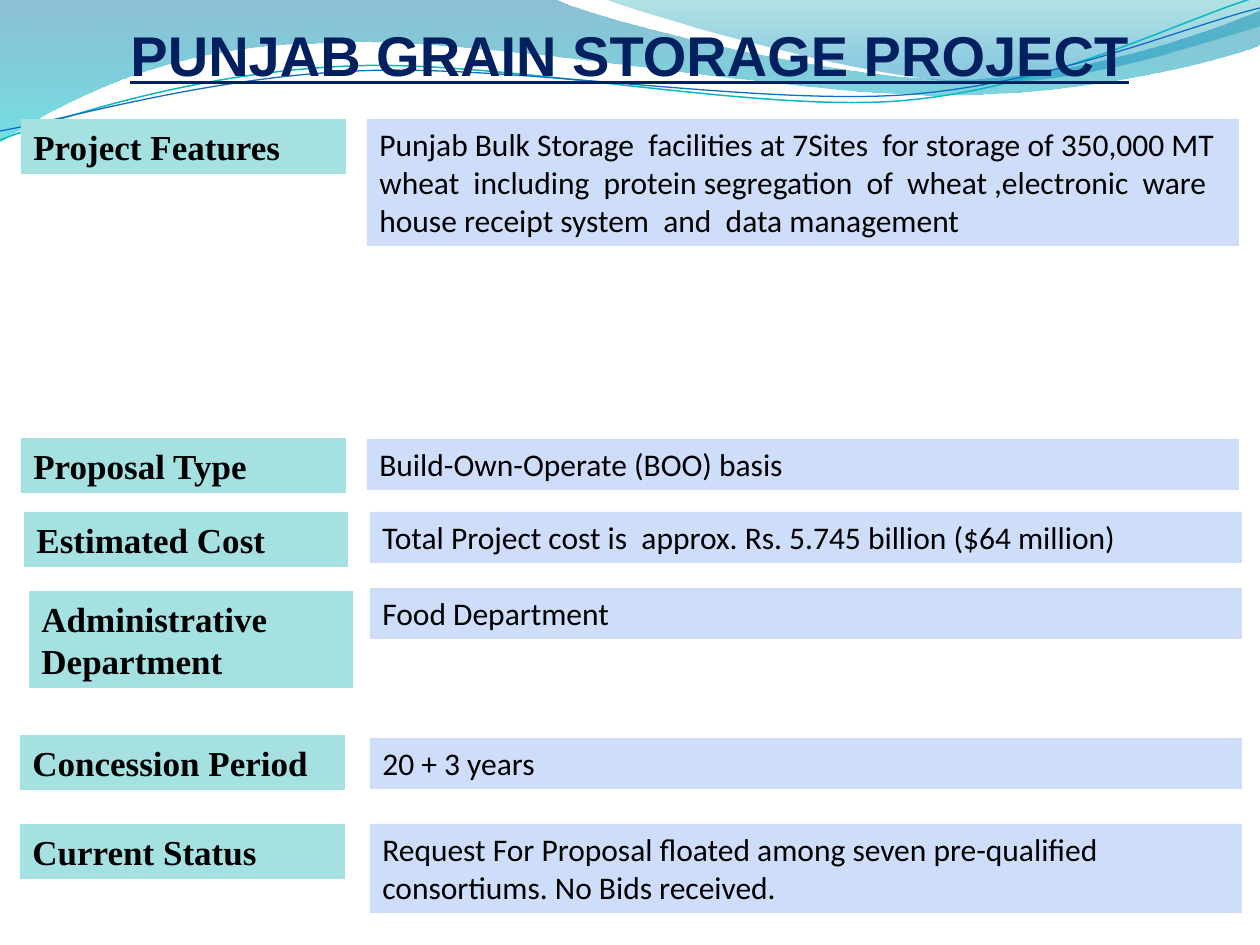
from lxml import etree
from pptx import Presentation
from pptx.dml.color import RGBColor
from pptx.enum.shapes import MSO_SHAPE
from pptx.enum.text import MSO_ANCHOR, MSO_AUTO_SIZE, PP_ALIGN
from pptx.oxml.ns import qn
from pptx.util import Emu, Pt

EMU_PER_PX = 914400 / 126
RECTANGLE = MSO_SHAPE.RECTANGLE
TOP, BOTTOM = MSO_ANCHOR.TOP, MSO_ANCHOR.BOTTOM
GROW = MSO_AUTO_SIZE.SHAPE_TO_FIT_TEXT
LEFT, CENTER = PP_ALIGN.LEFT, PP_ALIGN.CENTER

COLORS = {
    "title": "002060", "text": "000000", "label": "A6E1E2", "detail": "CEDDFA",
    "deep_blue": "0074A1", "aqua": "00C6CF", "teal": "00A1A9", "sky": "008BBF",
    "teal_line": "0AB8BF", "blue_line": "0F6FC6",
}

WAVE_BANDS = [
    ((0, -1), [
        [(554, -1)],
        [(600, 21), (837, 79), (955, 79)],
        [(1075, 79), (1207, 33), (1260, 11)],
        [(1261, 45)],
        [(1239, 55), (1096, 96), (940, 95)],
        [(784, 95), (481, 35), (324, 43)],
        [(163, 44), (58, 105), (-1, 142)],
        [(0, -1)],
    ], [("deep_blue", 0, 45), ("aqua", 1, 55)]),
    ((604, -1), [
        [(641, 14), (859, 78), (969, 82)],
        [(1079, 87), (1211, 40), (1260, 26)],
        [(1260, 0)],
        [(604, -1)],
    ], [("teal", 0, 30), ("sky", 0.8, 45)]),
]
WAVE_LINES = [
    ((0, 140), [
        [(60, 117), (199, 72), (349, 66)],
        [(498, 59), (747, 112), (898, 101)],
        [(1050, 89), (1182, 19), (1257, -3)],
    ], "teal_line", 0.85),
    ((0, 131), [
        [(59, 121), (207, 77), (357, 71)],
        [(508, 64), (752, 105), (903, 95)],
        [(1053, 84), (1186, 26), (1260, 8)],
    ], "blue_line", 0.75),
]

LABELS = [
    ("Project Features", 21, 119, 325, 55),
    ("Proposal Type", 21, 438, 325, 55),
    ("Estimated Cost", 24, 512, 324, 55),
    ("Administrative Department", 29, 591, 324, 97),
    ("Concession Period", 20, 735, 325, 55),
    ("Current Status", 20, 824, 325, 55),
]
DETAILS = [
    ("Punjab Bulk Storage  facilities at 7Sites  for storage of 350,000 MT wheat  "
     "including  protein segregation  of  wheat ,electronic  ware house receipt "
     "system  and  data management", 367, 119, 872, 127),
    ("Build-Own-Operate (BOO) basis", 367, 439, 872, 51),
    ("Total Project cost is  approx. Rs. 5.745 billion ($64 million)", 370, 512, 872, 51),
    ("Food Department", 370, 588, 872, 51),
    ("20 + 3 years", 370, 738, 872, 51),
    ("Request For Proposal floated among seven pre-qualified consortiums. "
     "No Bids received.", 370, 824, 872, 89),
]


def px(length):
    """Turn a length in px into EMU."""
    return Emu(round(length * EMU_PER_PX))


def rgb(name):
    """Look up a named colour."""
    return RGBColor.from_string(COLORS[name])


def bend(wave, segments):
    """Turn the edges that have control points into Bezier curves."""
    edges = list(wave.element.spPr.iter(qn("a:lnTo")))
    for edge, segment in zip(edges, segments):
        if len(segment) == 1:
            continue
        edge.tag = qn("a:cubicBezTo")
        edge.remove(edge[0])
        for x, y in segment:
            point = etree.SubElement(edge, qn("a:pt"))
            point.set("x", str(px(x) - wave.left))
            point.set("y", str(px(y) - wave.top))


def curved(edge_parent, segments):
    """Replace straight edges by curves where a segment has control points."""
    for edge, segment in zip(list(edge_parent.iter(qn("a:lnTo"))), segments):
        yield edge, segment


def add_wave(slide, start, segments, close):
    """Draw an outline of straight edges and curves."""
    builder = slide.shapes.build_freeform(px(start[0]), px(start[1]))
    corners = [(px(x), px(y)) for x, y in (segment[-1] for segment in segments)]
    builder.add_line_segments(corners, close=close)
    wave = builder.convert_to_shape()
    wave.shadow.inherit = False
    bend(wave, segments)
    return wave


def add_wave_band(slide, start, segments, stops):
    """Draw a translucent band shaded from top to bottom."""
    band = add_wave(slide, start, segments[:-1], True)
    band.line.fill.background()
    band.fill.gradient()
    band.fill.gradient_angle = 270
    for stop, (color, position, opacity) in zip(band.fill.gradient_stops, stops):
        stop.color.rgb = rgb(color)
        stop.position = position
    shades = list(band.element.spPr.iter(qn("a:srgbClr")))
    for shade, (_, _, opacity) in zip(shades, stops):
        etree.SubElement(shade, qn("a:alpha")).set("val", str(opacity * 1000))


def add_wave_line(slide, start, segments, color, width):
    """Draw a thin open curve."""
    curve = add_wave(slide, start, segments, False)
    curve.fill.background()
    curve.line.color.rgb = rgb(color)
    curve.line.width = Pt(width)


def write(frame, wording, font_name, size, color, align, bold):
    """Put one formatted run into a wrapping text frame."""
    frame.word_wrap = True
    paragraph = frame.paragraphs[0]
    paragraph.alignment = align
    run = paragraph.add_run()
    run.text = wording
    run.font.name = font_name
    run.font.size = Pt(size)
    run.font.bold = bold
    run.font.color.rgb = rgb(color)
    return run


def add_title(slide, wording):
    """Add the underlined heading."""
    frame = slide.shapes.add_textbox(px(63), px(0), px(1134), px(88)).text_frame
    frame.margin_left = frame.margin_right = frame.margin_bottom = 0
    frame.vertical_anchor = BOTTOM
    heading = write(frame, wording, "Arial", 32, "title", CENTER, True)
    heading.font.underline = True


def add_box(slide, wording, left, top, width, height, fill, font_name, size, bold):
    """Add a filled rectangle with text at its top left."""
    box = slide.shapes.add_shape(RECTANGLE, px(left), px(top), px(width), px(height))
    box.shadow.inherit = False
    box.fill.solid()
    box.fill.fore_color.rgb = rgb(fill)
    box.line.fill.background()
    box.text_frame.vertical_anchor = TOP
    box.text_frame.auto_size = GROW
    write(box.text_frame, wording, font_name, size, "text", LEFT, bold)


def main():
    """Build and save the slide."""
    deck = Presentation()
    deck.slide_width, deck.slide_height = px(1260), px(945)
    slide = deck.slides.add_slide(deck.slide_layouts[6])
    for band in WAVE_BANDS:
        add_wave_band(slide, *band)
    for line in WAVE_LINES:
        add_wave_line(slide, *line)
    add_title(slide, "PUNJAB GRAIN STORAGE PROJECT")
    for label, detail in zip(LABELS, DETAILS):
        add_box(slide, *label, "label", "Times New Roman", 20, True)
        add_box(slide, *detail, "detail", "Calibri", 18, False)
    deck.save("out.pptx")


if __name__ == "__main__":
    main()
